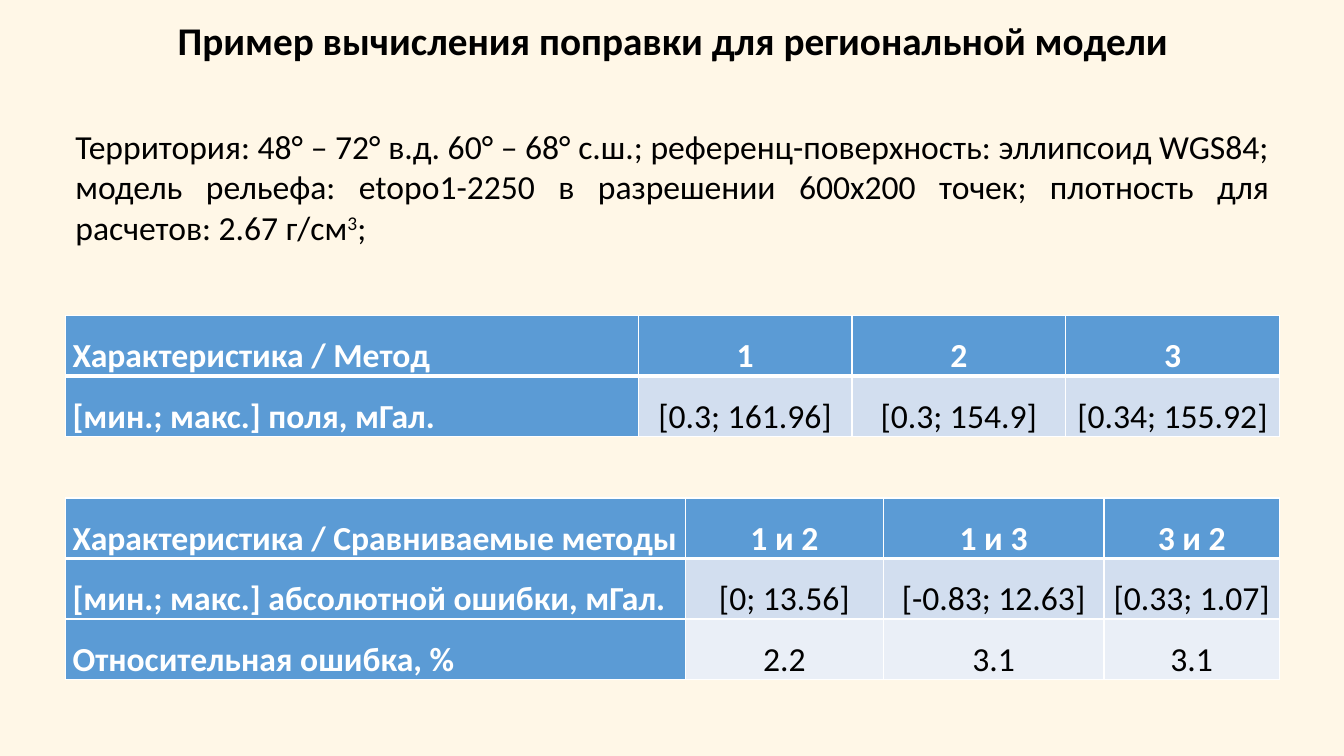
from lxml.etree import SubElement
from pptx import Presentation
from pptx.dml.color import RGBColor
from pptx.enum.text import MSO_ANCHOR as Anchor, MSO_AUTO_SIZE as AutoSize, PP_ALIGN as Align
from pptx.oxml.ns import qn
from pptx.util import Inches, Pt

CREAM = RGBColor(0xFF, 0xF7, 0xE7)
BLACK = RGBColor(0, 0, 0)
WHITE = RGBColor(0xFF, 0xFF, 0xFF)
BLUE = RGBColor(0x5B, 0x9B, 0xD5)
BANDS = [RGBColor(0xD2, 0xDE, 0xEF), RGBColor(0xEA, 0xEF, 0xF7)]

LEFT, WIDTH, ROW_HEIGHT = 0.65, 12.04, 0.6

METHODS = [
    ["Характеристика / Метод", "1", "2", "3"],
    ["[мин.; макс.] поля, мГал.", "[0.3; 161.96]", "[0.3; 154.9]", "[0.34; 155.92]"],
]
COMPARISON = [
    ["Характеристика / Сравниваемые методы", "1 и 2", "1 и 3", "3 и 2"],
    ["[мин.; макс.] абсолютной ошибки, мГал.", "[0; 13.56]", "[-0.83; 12.63]", "[0.33; 1.07]"],
    ["Относительная ошибка, %", "2.2", "3.1", "3.1"],
]
TERRITORY = (
    "Территория: 48° – 72° в.д. 60° – 68° с.ш.; референц-поверхность: эллипсоид WGS84; "
    "модель рельефа: etopo1-2250 в разрешении 600x200 точек; плотность для расчетов: 2.67 г/см"
)


def add_text(paragraph, text, size=24, color=BLACK, bold=False, align=Align.LEFT,
             spacing=1.0, superscript=False):
    paragraph.alignment = align
    paragraph.line_spacing = spacing
    run = paragraph.add_run()
    run.text = text
    run.font.name = "Calibri"
    run.font.size = Pt(size)
    run.font.bold = bold
    run.font.color.rgb = color
    if superscript:
        run._r.get_or_add_rPr().set("baseline", "30000")


def set_border(cell, side, width):
    properties = cell._tc.get_or_add_tcPr()
    line = SubElement(properties, qn(f"a:ln{side}"), w=str(Pt(width)))
    fill = SubElement(line, qn("a:solidFill"))
    SubElement(fill, qn("a:srgbClr"), val=str(WHITE))


def place_title(slide, left, top, width, height):
    title = slide.shapes.title
    title.left, title.top = Inches(left), Inches(top)
    title.width, title.height = Inches(width), Inches(height)
    title.text_frame.vertical_anchor = Anchor.MIDDLE
    add_text(title.text_frame.paragraphs[0], "Пример вычисления поправки для региональной модели",
             size=28, bold=True, align=Align.CENTER, spacing=0.9)


def add_description(slide, left, top, width, height):
    box = slide.shapes.add_textbox(Inches(left), Inches(top), Inches(width), Inches(height))
    frame = box.text_frame
    frame.word_wrap = True
    frame.auto_size = AutoSize.SHAPE_TO_FIT_TEXT
    for text, superscript in [(TERRITORY, False), ("3", True), (";", False)]:
        add_text(frame.paragraphs[0], text, align=Align.JUSTIFY, superscript=superscript)


def fill_cell(cell, text, row, column):
    heading = row == 0 or column == 0
    cell.margin_left = cell.margin_right = Inches(0.07)
    cell.margin_top = cell.margin_bottom = 0
    cell.vertical_anchor = Anchor.TOP if heading else Anchor.MIDDLE
    for side in "LRTB":
        under_header = (row, side) in [(0, "B"), (1, "T")]
        set_border(cell, side, 3 if under_header else 1)
    cell.fill.solid()
    cell.fill.fore_color.rgb = BLUE if heading else BANDS[(row - 1) % 2]
    add_text(cell.text_frame.paragraphs[0], text, color=WHITE if heading else BLACK,
             bold=heading, align=Align.CENTER if column else Align.LEFT, spacing=1.5)


def add_data_table(slide, left, top, column_widths, rows):
    table = slide.shapes.add_table(
        len(rows), len(column_widths), Inches(left), Inches(top),
        Inches(sum(column_widths)), Inches(ROW_HEIGHT * len(rows))).table
    for column, width in zip(table.columns, column_widths):
        column.width = Inches(width)
    for row, texts in enumerate(rows):
        for column, text in enumerate(texts):
            fill_cell(table.cell(row, column), text, row, column)


def main():
    presentation = Presentation()
    presentation.slide_width, presentation.slide_height = Inches(13.33), Inches(7.5)
    slide = presentation.slides.add_slide(presentation.slide_layouts[5])
    slide.background.fill.solid()
    slide.background.fill.fore_color.rgb = CREAM
    place_title(slide, LEFT, 0.02, WIDTH, 0.8)
    add_description(slide, LEFT, 1.2, WIDTH, 1.31)
    add_data_table(slide, LEFT, 3.13, [5.68, 2.12, 2.12, 2.12], METHODS)
    add_data_table(slide, LEFT, 4.94, [6.15, 1.96, 2.19, 1.74], COMPARISON)
    presentation.save("out.pptx")


if __name__ == "__main__":
    main()
